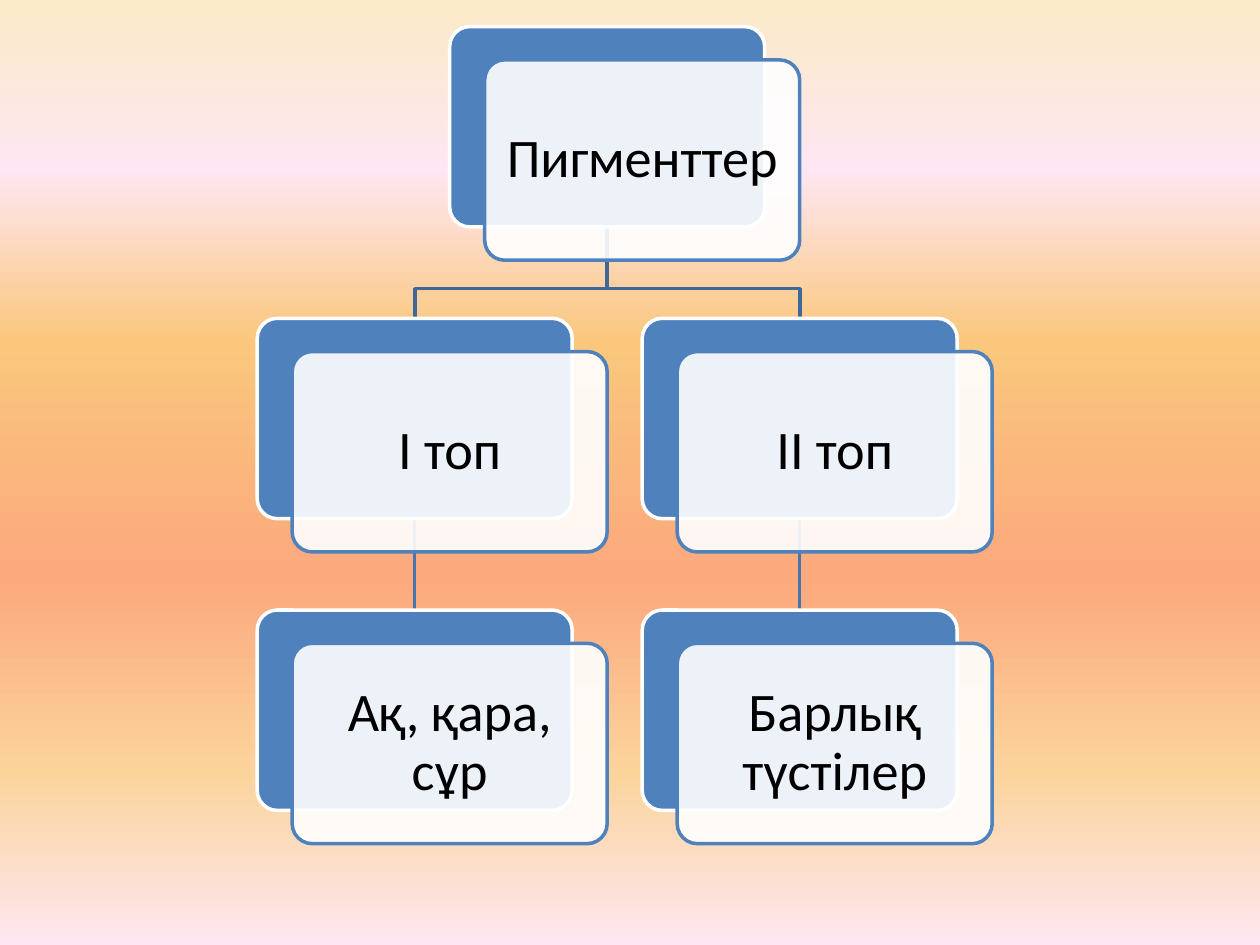
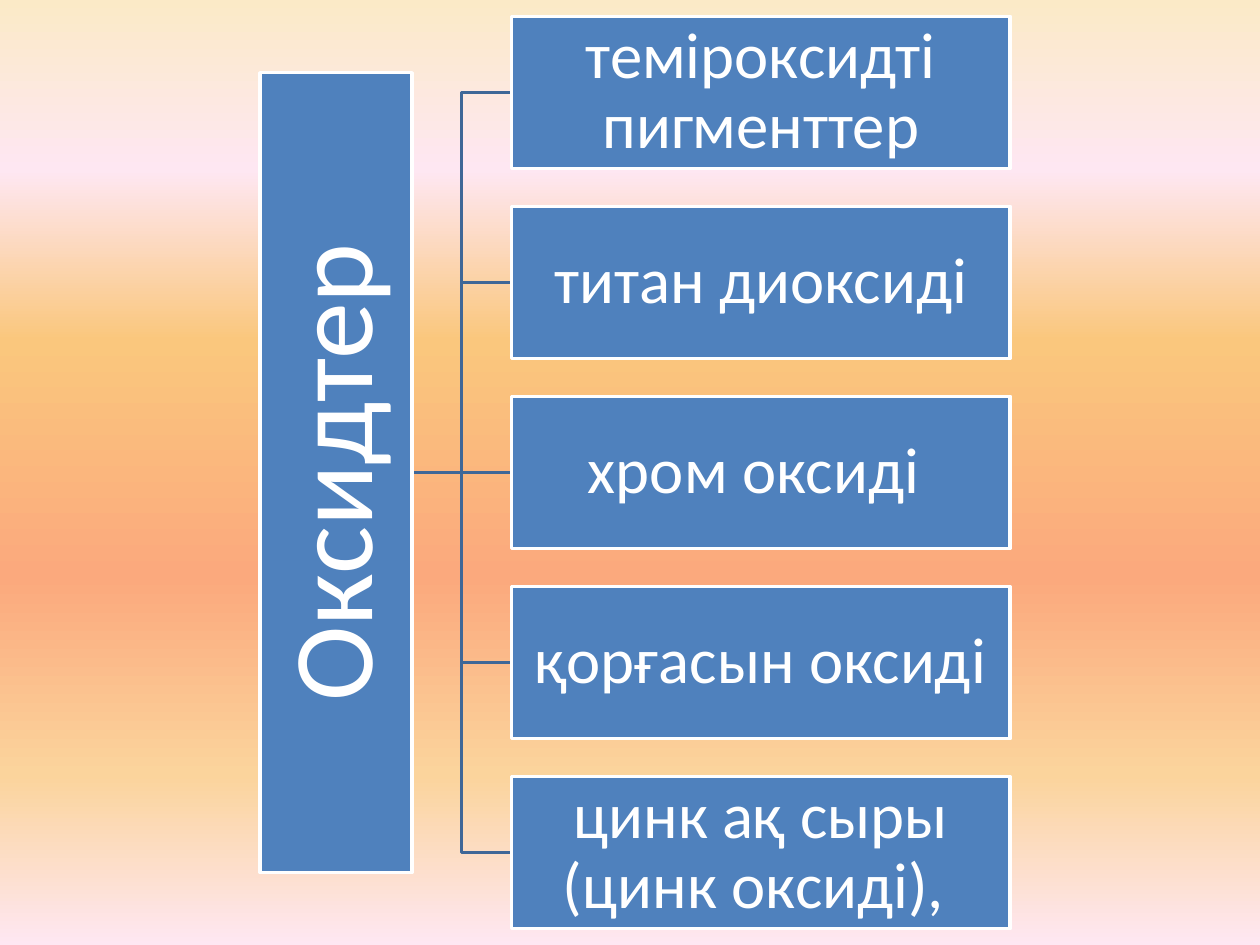
from lxml import etree
from pptx import Presentation
from pptx import util as u
from pptx.dml import color
from pptx.enum import shapes, text
from pptx.oxml import ns

Pt = u.Pt
paint = color.RGBColor.from_string
BLUE, WHITE, BLACK = "4F81BD", "FFFFFF", "000000"
LINK, LOWER_LINK = "3F6797", "4875AC"
FONT = "Calibri"
BACKGROUND = [(0, "FBEAC7"), (18, "FEE7F2"), (36, "FAC77D"),
              (61, "FBA97D"), (82, "FBD49C"), (100, "FEE7F2")]


def add_box(page, kind, place, fill, line, words="", size=0, ink=WHITE, inset=0):
    box = page.shapes.add_shape(kind, *[Pt(length) for length in place])
    box.shadow.inherit = False
    box.fill.solid()
    box.fill.fore_color.rgb = paint(fill)
    box.line.color.rgb = paint(line)
    box.line.width = Pt(2)
    if words:
        frame = box.text_frame
        frame.word_wrap = True
        frame.vertical_anchor = text.MSO_ANCHOR.MIDDLE
        frame.margin_left = frame.margin_right = Pt(inset)
        frame.margin_top = frame.margin_bottom = Pt(inset)
        para = frame.paragraphs[0]
        para.alignment = text.PP_ALIGN.CENTER
        para.line_spacing = 0.9
        span = para.add_run()
        span.text = words
        span.font.name = FONT
        span.font.size = Pt(size)
        span.font.color.rgb = paint(ink)
    return box


def add_path(page, points, hue):
    points = [(Pt(x), Pt(y)) for x, y in points]
    if len(points) == 2:
        path = page.shapes.add_connector(shapes.MSO_CONNECTOR.STRAIGHT, *points[0], *points[1])
        etree.SubElement(path.element.spPr, ns.qn("a:effectLst"))
    else:
        builder = page.shapes.build_freeform(*points[0])
        builder.add_line_segments(points[1:], close=False)
        path = builder.convert_to_shape()
        path.shadow.inherit = False
        path.fill.background()
    path.line.color.rgb = paint(hue)
    path.line.width = Pt(2)


deck = Presentation()
deck.slide_width, deck.slide_height = Pt(720), Pt(540)
pages = [deck.slides.add_slide(deck.slide_layouts[6]) for _ in range(2)]
for page in pages:
    fill = page.background.fill
    fill.gradient()
    fill.gradient_angle = 270
    stops = next(page.element.iter(ns.qn("a:gsLst")))
    for stop in list(stops):
        stops.remove(stop)
    for percent, hue in BACKGROUND:
        stop = etree.SubElement(stops, ns.qn("a:gs"), pos=str(percent * 1000))
        etree.SubElement(stop, ns.qn("a:srgbClr"), val=hue)

tree_page, list_page = pages

card_width, card_height = 180, 114.5
shift_x, shift_y = 20, 19
top, row_step = 15.2, 166.7
left, column_step = 147, 220
cards = [("Пигменттер", 0.5, 0), ("І топ", 0, 1), ("Ақ, қара, сұр", 0, 2),
         ("ІІ топ", 1, 1), ("Барлық түстілер", 1, 2)]

root_x = left + column_step / 2 + card_width / 2 + 0
root_bottom = top + card_height
for column in range(2):
    centre = left + column * column_step + card_width / 2
    group_top = top + row_step
    add_path(tree_page, [(centre, group_top + card_height), (centre, group_top + row_step)],
             LOWER_LINK)
    add_path(tree_page, [(root_x, root_bottom), (root_x, 165), (centre, 165),
                         (centre, group_top)], LINK)

rounded = shapes.MSO_SHAPE.ROUNDED_RECTANGLE
for words, column, row in cards:
    x, y = left + column * column_step, top + row * row_step
    back = add_box(tree_page, rounded, (x, y, card_width, card_height), BLUE, WHITE)
    front = add_box(tree_page, rounded, (x + shift_x, y + shift_y, card_width, card_height),
                    WHITE, BLUE, words, 31, BLACK, 9)
    back.adjustments[0] = front.adjustments[0] = 0.1
    veil = front.element.spPr.find(ns.qn("a:solidFill"))[0]
    etree.SubElement(veil, ns.qn("a:alpha"), val="90000")

oxides = ["теміроксидті пигменттер", "титан диоксиді", "хром оксиді ",
          "қорғасын оксиді", "цинк ақ сыры (цинк оксиді), "]
middle, bar_centre, bar_length = 270, 192, 457
item_left, item_width, item_height, item_step = 292.3, 285, 87, 108.6
bar_right = bar_centre + item_height / 2
trunk = (bar_right + item_left) / 2
levels = [middle + (index - 2) * item_step for index in range(len(oxides))]

for level in levels:
    bend = [] if level == middle else [(trunk, middle), (trunk, level)]
    add_path(list_page, [(bar_right, middle), *bend, (item_left, level)], LINK)

rectangle = shapes.MSO_SHAPE.RECTANGLE
bar = add_box(list_page, rectangle,
              (bar_centre - bar_length / 2, middle - item_height / 2, bar_length, item_height),
              BLUE, WHITE, "Оксидтер", 65, WHITE, 3.6)
bar.rotation = 270
for words, level in zip(oxides, levels):
    add_box(list_page, rectangle, (item_left, level - item_height / 2, item_width, item_height),
            BLUE, WHITE, words, 37, WHITE, 2)

deck.save("out.pptx")
